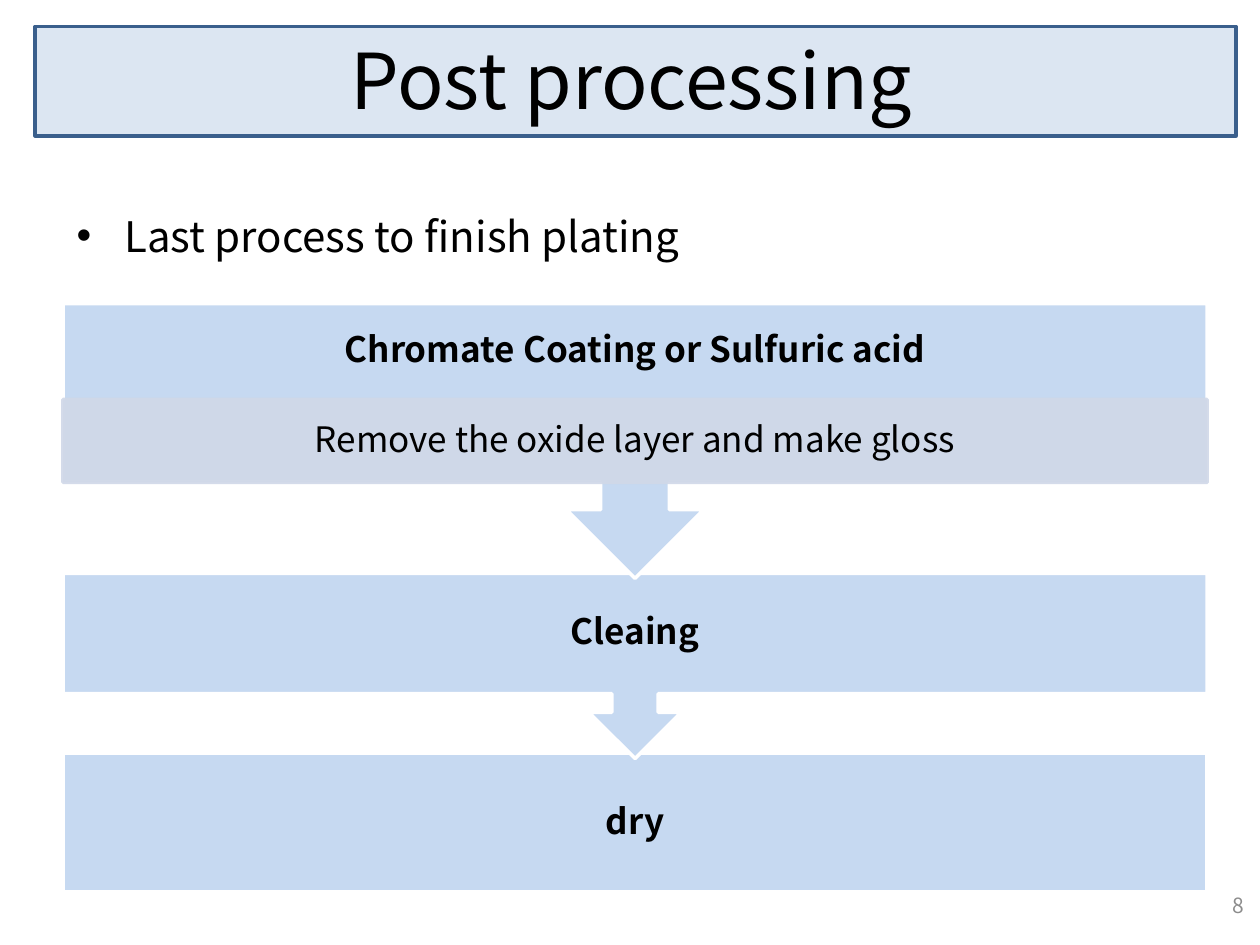
from dataclasses import dataclass

from lxml.etree import SubElement
from pptx import Presentation
from pptx.dml.color import RGBColor
from pptx.enum.shapes import MSO_SHAPE
from pptx.enum.text import MSO_ANCHOR, PP_ALIGN
from pptx.oxml.ns import qn
from pptx.util import Inches, Pt


@dataclass(frozen=True)
class Theme:
    font: str = "Noto Sans CJK KR"
    ink: str = "000000"
    muted: str = "8C8C8C"
    banner: str = "DCE6F2"
    banner_edge: str = "3A5F8C"
    step: str = "C6D9F1"
    step_edge: str = "FFFFFF"
    detail: str = "D0D8E8"
    title_size: int = 44
    body_size: int = 24
    step_size: int = 20
    number_size: int = 12
    line_width: int = 2


def write(frame, text, *, font, size, color, bold=False, align=PP_ALIGN.CENTER,
          anchor=MSO_ANCHOR.MIDDLE, inset=(0.1, 0.05), spacing=None):
    frame.word_wrap = True
    frame.vertical_anchor = anchor
    frame.margin_left = frame.margin_right = Inches(inset[0])
    frame.margin_top = frame.margin_bottom = Inches(inset[1])
    paragraph = frame.paragraphs[0]
    paragraph.alignment = align
    if spacing:
        paragraph.line_spacing = spacing
    run = paragraph.add_run()
    run.text = text
    run.font.name = font
    run.font.size = Pt(size)
    run.font.bold = bold
    run.font.color.rgb = RGBColor.from_string(color)
    return paragraph


class SlideBuilder:
    def __init__(self, slide, theme):
        self.slide = slide
        self.theme = theme

    def block(self, box, fill, edge, kind=MSO_SHAPE.RECTANGLE, opacity=None):
        block = self.slide.shapes.add_shape(kind, *map(Inches, box))
        block.shadow.inherit = False
        block.fill.solid()
        block.fill.fore_color.rgb = RGBColor.from_string(fill)
        block.line.color.rgb = RGBColor.from_string(edge)
        block.line.width = Pt(self.theme.line_width)
        if opacity:
            for color in block._element.spPr.iter(qn("a:srgbClr")):
                SubElement(color, qn("a:alpha"), val=str(opacity * 1000))
        return block

    def label(self, text, box, **style):
        style = {"font": self.theme.font, "color": self.theme.ink} | style
        holder = self.slide.shapes.add_textbox(*map(Inches, box))
        return write(holder.text_frame, text, **style)

    def bullet(self, text, box):
        paragraph = self.label(text, box, size=self.theme.body_size,
                               align=PP_ALIGN.LEFT, anchor=MSO_ANCHOR.TOP)
        properties = paragraph._p.get_or_add_pPr()
        properties.set("marL", str(Inches(0.38)))
        properties.set("indent", str(Inches(-0.38)))
        SubElement(properties, qn("a:buFont"), typeface="Arial")
        SubElement(properties, qn("a:buChar"), char="•")

    def step(self, text, box, text_height, leads_on=True):
        kind = MSO_SHAPE.UP_ARROW_CALLOUT if leads_on else MSO_SHAPE.RECTANGLE
        block = self.block(box, self.theme.step, self.theme.step_edge, kind)
        if leads_on:
            block.rotation = 180
        left, top, width, _ = box
        self.label(text, (left, top, width, text_height), bold=True,
                   size=self.theme.step_size, inset=(0.16, 0.16), spacing=0.9)

    def detail(self, text, box):
        block = self.block(box, self.theme.detail, self.theme.detail, opacity=90)
        write(block.text_frame, text, font=self.theme.font, color=self.theme.ink,
              size=self.theme.step_size, inset=(0.16, 0.03), spacing=0.9)


def main():
    deck = Presentation()
    deck.slide_width, deck.slide_height = Inches(10), Inches(7.5)
    theme = Theme()
    page = SlideBuilder(deck.slides.add_slide(deck.slide_layouts[6]), theme)

    page.block((0.28, 0.21, 9.53, 0.87), theme.banner, theme.banner_edge)
    page.label("Post processing", (0.51, 0, 9, 1.25), size=theme.title_size)
    page.bullet("Last process to finish plating", (0.51, 1.62, 9, 0.94))
    page.label("8", (7.64, 6.98, 2.33, 0.4), size=theme.number_size,
               color=theme.muted, align=PP_ALIGN.RIGHT)

    left, width = 0.5, 9.08
    steps = [
        ("dry", 5.98, 1.1, 1.1, False),
        ("Cleaing", 4.55, 1.47, 0.95, True),
        ("Chromate Coating or Sulfuric acid", 2.41, 2.18, 0.76, True),
    ]
    for text, top, height, text_height, leads_on in steps:
        page.step(text, (left, top, width, height), text_height, leads_on)
    page.detail("Remove the oxide layer and make gloss", (left, 3.17, width, 0.66))

    deck.save("out.pptx")


if __name__ == "__main__":
    main()
